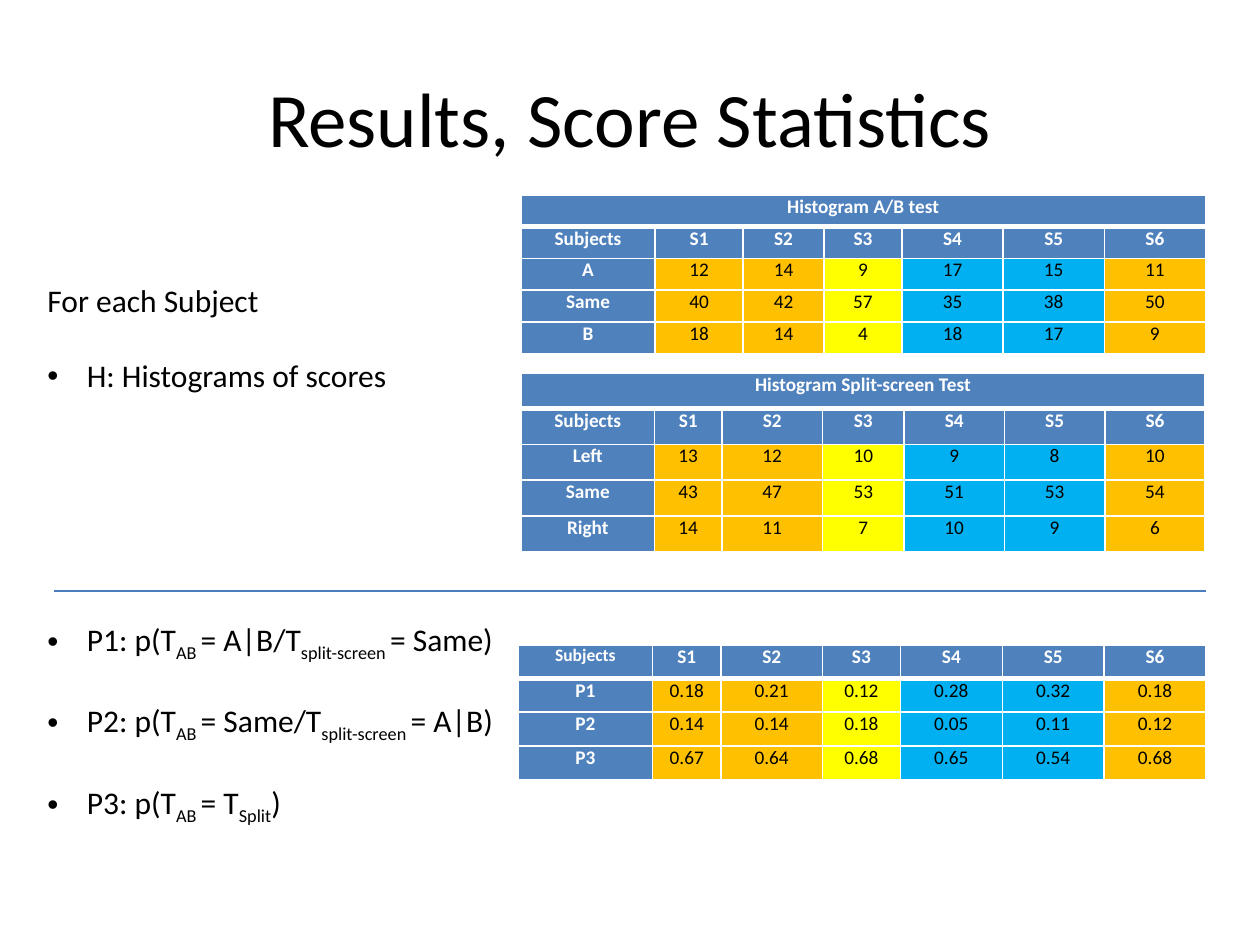
import dataclasses

import lxml.etree
import pptx
import pptx.dml.color
import pptx.enum.shapes
import pptx.enum.text
import pptx.oxml.ns
import pptx.util

Pt = pptx.util.Pt
qn = pptx.oxml.ns.qn
CENTER = pptx.enum.text.PP_ALIGN.CENTER


@dataclasses.dataclass(frozen=True)
class Theme:
    font: str = "Calibri"
    ink: str = "000000"
    paper: str = "FFFFFF"
    header: str = "4F81BD"
    rule: str = "4B7EBC"
    amber: str = "FFC000"
    yellow: str = "FFFF00"
    blue: str = "00B0F0"
    title: float = 44
    body: float = 18
    cell: float = 11
    small_cell: float = 10


def rgb(value):
    return pptx.dml.color.RGBColor.from_string(value)


def apply(target, values):
    for name, value in values.items():
        setattr(target, name, value)


class SlideBuilder:
    def __init__(self, slide, theme):
        self.slide = slide
        self.theme = theme
        self.subject_fills = [theme.amber, theme.amber, theme.yellow,
                              theme.blue, theme.blue, theme.amber]

    def style(self, font, size, color, bold=False):
        apply(font, {"name": self.theme.font, "size": Pt(size), "bold": bold})
        font.color.rgb = rgb(color)

    def text_frame(self, left, top, width, height):
        frame = self.slide.shapes.add_textbox(*map(Pt, (left, top, width, height))).text_frame
        frame.word_wrap = True
        return frame

    def title(self, text, *box):
        frame = self.text_frame(*box)
        frame.vertical_anchor = pptx.enum.text.MSO_ANCHOR.MIDDLE
        heading = frame.paragraphs[0]
        apply(heading, {"text": text, "alignment": CENTER})
        self.style(heading.runs[0].font, self.theme.title, self.theme.ink)

    def bullet(self, paragraph):
        properties = paragraph._p.get_or_add_pPr()
        properties.set("marL", str(Pt(22.5)))
        properties.set("indent", str(-Pt(22.5)))
        lxml.etree.SubElement(properties, qn("a:buFont")).set("typeface", "Arial")
        lxml.etree.SubElement(properties, qn("a:buChar")).set("char", "•")

    def outline(self, lead, points, *box):
        frame = self.text_frame(*box)
        frame.paragraphs[0].text = lead
        self.style(frame.paragraphs[0].runs[0].font, self.theme.body, self.theme.ink)
        for gap, pieces in points:
            point = frame.add_paragraph()
            self.bullet(point)
            point.space_before = Pt(gap)
            for index, piece in enumerate(pieces):
                run = point.add_run()
                run.text = piece
                self.style(run.font, self.theme.body, self.theme.ink)
                if index % 2:
                    run._r.get_or_add_rPr().set("baseline", "-25000")

    def borders(self, cell, row):
        properties = cell._tc.get_or_add_tcPr()
        widths = {"a:lnL": 1, "a:lnR": 1,
                  "a:lnT": 3 if row == 1 else 1, "a:lnB": 3 if row == 0 else 1}
        for tag, width in widths.items():
            edge = lxml.etree.SubElement(properties, qn(tag))
            edge.set("w", str(Pt(width)))
            paint = lxml.etree.SubElement(edge, qn("a:solidFill"))
            lxml.etree.SubElement(paint, qn("a:srgbClr")).set("val", self.theme.paper)

    def cell(self, cell, row, text, fill, size, is_header):
        self.borders(cell, row)
        cell.fill.solid()
        cell.fill.fore_color.rgb = rgb(fill)
        apply(cell, {"text": text, "margin_left": Pt(5), "margin_right": Pt(5),
                     "margin_top": 0, "margin_bottom": 0})
        paragraph = cell.text_frame.paragraphs[0]
        paragraph.alignment = CENTER
        self.style(paragraph.font, size,
                   self.theme.paper if is_header else self.theme.ink, is_header)

    def scores(self, left, top, row_height, widths, results, caption=None, corner_size=None):
        theme = self.theme
        subjects = ["Subjects"] + [f"S{number}" for number in range(1, 7)]
        captions = [[caption] + [""] * 6] if caption else []
        rows = captions + [subjects] + results
        table = self.slide.shapes.add_table(
            len(rows), len(widths), Pt(left), Pt(top),
            Pt(sum(widths)), Pt(row_height * len(rows))).table
        for column, width in zip(table.columns, widths):
            column.width = Pt(width)
        heading_rows = len(captions) + 1
        for r, values in enumerate(rows):
            table.rows[r].height = Pt(row_height)
            for c, value in enumerate(values):
                is_header = r < heading_rows or c == 0
                fill = theme.header if is_header else self.subject_fills[c - 1]
                size = corner_size if corner_size and r == c == 0 else theme.cell
                self.cell(table.cell(r, c), r, str(value), fill, size, is_header)
        if caption:
            table.cell(0, 0).merge(table.cell(0, len(widths) - 1))

    def divider(self, left, right, y):
        line = self.slide.shapes.add_connector(
            pptx.enum.shapes.MSO_CONNECTOR.STRAIGHT, Pt(left), Pt(y), Pt(right), Pt(y))
        line.line.color.rgb = rgb(self.theme.rule)
        line.line.width = Pt(0.75)
        lxml.etree.SubElement(line._element.spPr, qn("a:effectLst"))


def main():
    deck = pptx.Presentation()
    apply(deck, {"slide_width": Pt(720), "slide_height": Pt(540)})
    theme = Theme()
    page = SlideBuilder(deck.slides.add_slide(deck.slide_layouts[6]), theme)

    page.title("Results, Score Statistics", 36, 21.6, 648, 90)
    page.outline("For each Subject", [
        (21.5, ["H: Histograms of scores"]),
        (129, ["P1: p(T", "AB ", "= A|B/T", "split-screen ", "= Same)"]),
        (22, ["P2: p(T", "AB ", "= Same/T", "split-screen ", "= A|B)"]),
        (22, ["P3: p(T", "AB ", "= T", "Split", ")"]),
    ], 20, 157, 635, 312.5)

    page.scores(296, 368.6, 19.2, [77, 39, 58, 44.6, 58.2, 58.2, 58.2], [
        ["P1", 0.18, 0.21, 0.12, 0.28, 0.32, 0.18],
        ["P2", 0.14, 0.14, 0.18, 0.05, 0.11, 0.12],
        ["P3", 0.67, 0.64, 0.68, 0.65, 0.54, 0.68],
    ], corner_size=theme.small_cell)
    page.scores(297.7, 111.4, 18.15, [76.7, 50.3, 46.2, 44.6, 57.8, 57.8, 57.8], [
        ["A", 12, 14, 9, 17, 15, 11],
        ["Same", 40, 42, 57, 35, 38, 50],
        ["B", 18, 14, 4, 18, 17, 9],
    ], caption="Histogram A/B test")
    page.scores(297.7, 213.2, 20.4, [76.4, 38.4, 57.6, 46.5, 57.4, 57.4, 57.4], [
        ["Left", 13, 12, 10, 9, 8, 10],
        ["Same", 43, 47, 53, 51, 53, 54],
        ["Right", 14, 11, 7, 10, 9, 6],
    ], caption="Histogram Split-screen Test")
    page.divider(31, 689, 337.7)

    deck.save("out.pptx")


if __name__ == "__main__":
    main()
